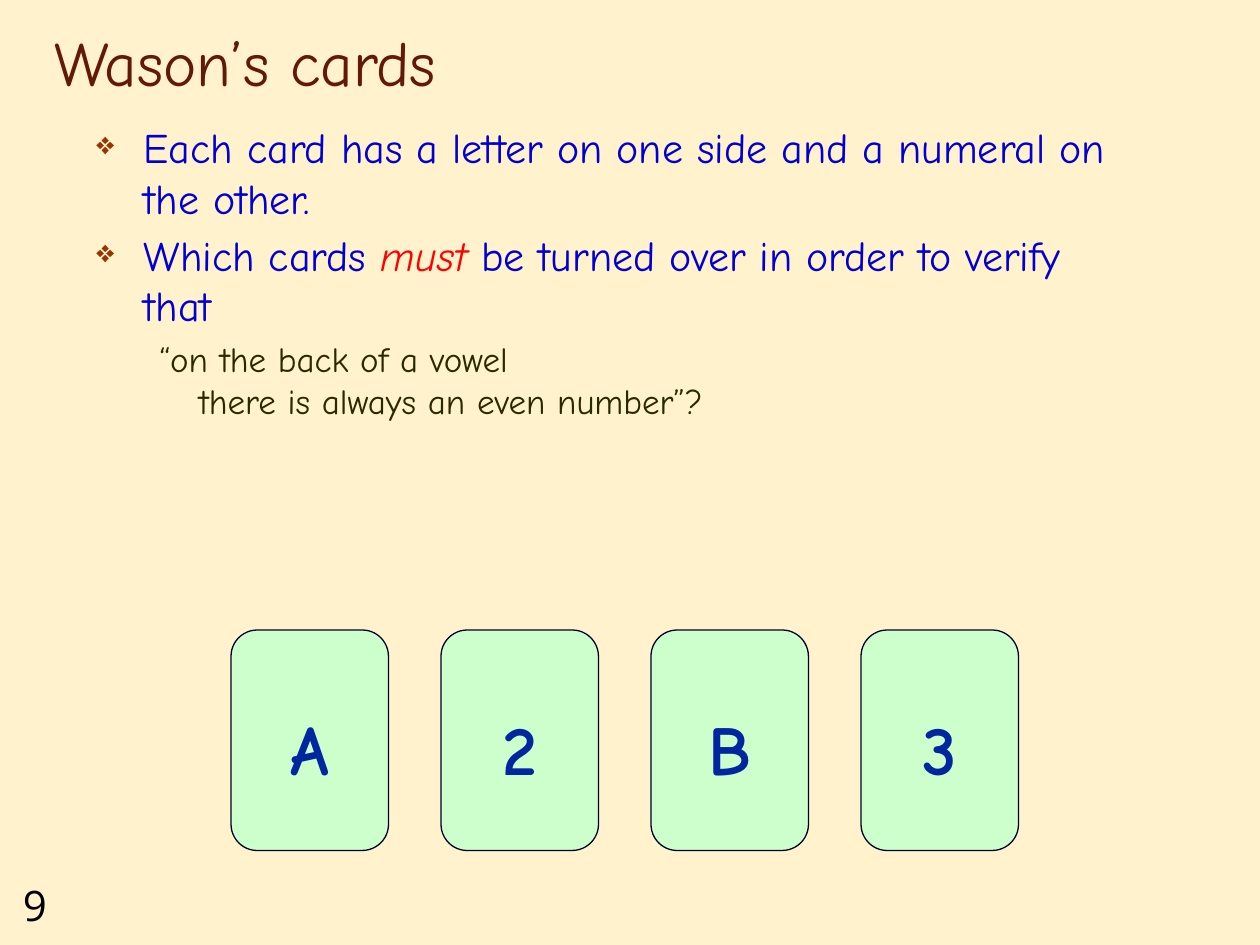
"""Build the slide on Wason's card selection task."""
from dataclasses import dataclass

from lxml import etree
from pptx import Presentation
from pptx.dml.color import RGBColor
from pptx.enum.shapes import MSO_SHAPE
from pptx.enum.text import MSO_ANCHOR, PP_ALIGN
from pptx.oxml.ns import qn
from pptx.util import Pt


@dataclass(frozen=True)
class Theme:
    font: str = "Comic Neue"
    number_font: str = "Open Sans"
    background: str = "FFF2CC"
    title: str = "631908"
    body: str = "0000D4"
    emphasis: str = "FF0000"
    rule: str = "292900"
    bullet: str = "993300"
    number: str = "000000"
    card_fill: str = "CCFFCC"
    card_line: str = "00002A"
    card_text: str = "00279F"
    title_size: int = 36
    body_size: int = 24
    rule_size: int = 20
    card_size: int = 40


THEME = Theme()
TITLE = "Wason’s cards"
PAGE_NUMBER = "9"
POINTS = [
    [("Each card has a letter on one side and a numeral on the other.", False)],
    [("Which cards ", False), ("must ", True),
     ("be turned over in order to verify that", False)],
]
RULE = ["“on the back of a vowel ", "there is always an even number”?"]
CARDS = ["A", "2", "B", "3"]

TITLE_BOX = (24, 12, 612, 48)
BODY_BOX = (48, 66, 608, 168)
NUMBER_BOX = (6, 499, 54, 36)
CARD_LEFT, CARD_TOP, CARD_WIDTH, CARD_HEIGHT, CARD_PITCH = 132, 360, 90, 126, 120


def colour(value):
    return RGBColor.from_string(value)


def add_run(paragraph, text, size, ink, font=THEME.font, bold=False, italic=False):
    run = paragraph.add_run()
    run.text = text
    run.font.name, run.font.size = font, Pt(size)
    run.font.bold, run.font.italic = bold, italic
    run.font.color.rgb = colour(ink)


def indent(paragraph, margin, hanging, bullet=None):
    properties = paragraph._p.get_or_add_pPr()
    properties.set("marL", str(Pt(margin)))
    properties.set("indent", str(Pt(-hanging)))
    paragraph.space_before = Pt(4)
    if bullet:
        ink = etree.SubElement(properties, qn("a:buClr"))
        etree.SubElement(ink, qn("a:srgbClr"), val=THEME.bullet)
        etree.SubElement(properties, qn("a:buSzPct"), val="75000")
        etree.SubElement(properties, qn("a:buChar"), char=bullet)


def add_text_box(slide, box):
    frame = slide.shapes.add_textbox(*map(Pt, box)).text_frame
    frame.word_wrap = True
    return frame


def add_title(slide):
    title = slide.shapes.title
    title.left, title.top, title.width, title.height = map(Pt, TITLE_BOX)
    frame = title.text_frame
    frame.vertical_anchor = MSO_ANCHOR.BOTTOM
    paragraph = frame.paragraphs[0]
    paragraph.alignment = PP_ALIGN.LEFT
    add_run(paragraph, TITLE, THEME.title_size, THEME.title)


def add_body(slide):
    frame = add_text_box(slide, BODY_BOX)
    paragraph = frame.paragraphs[0]
    for point in POINTS:
        indent(paragraph, 27, 27, "❖")
        for text, stressed in point:
            ink = THEME.emphasis if stressed else THEME.body
            add_run(paragraph, text, THEME.body_size, ink, italic=stressed)
        paragraph = frame.add_paragraph()
    indent(paragraph, 58.5, 22.5)
    for index, line in enumerate(RULE):
        if index:
            paragraph.add_line_break()
        add_run(paragraph, line, THEME.rule_size, THEME.rule)


def add_card(slide, index, face):
    box = (CARD_LEFT + index * CARD_PITCH, CARD_TOP, CARD_WIDTH, CARD_HEIGHT)
    card = slide.shapes.add_shape(MSO_SHAPE.ROUNDED_RECTANGLE, *map(Pt, box))
    card.shadow.inherit = False
    card.fill.solid()
    card.fill.fore_color.rgb = colour(THEME.card_fill)
    card.line.color.rgb = colour(THEME.card_line)
    card.line.width = Pt(0.75)
    frame = card.text_frame
    frame.vertical_anchor = MSO_ANCHOR.MIDDLE
    frame.margin_top = Pt(12)
    paragraph = frame.paragraphs[0]
    paragraph.alignment = PP_ALIGN.CENTER
    add_run(paragraph, face, THEME.card_size, THEME.card_text, bold=True)


def main():
    deck = Presentation()
    deck.slide_width, deck.slide_height = Pt(720), Pt(540)
    slide = deck.slides.add_slide(deck.slide_layouts[5])
    slide.background.fill.solid()
    slide.background.fill.fore_color.rgb = colour(THEME.background)
    number = add_text_box(slide, NUMBER_BOX).paragraphs[0]
    add_run(number, PAGE_NUMBER, THEME.body_size, THEME.number, THEME.number_font)
    add_title(slide)
    add_body(slide)
    for index, face in enumerate(CARDS):
        add_card(slide, index, face)
    deck.save("out.pptx")


if __name__ == "__main__":
    main()
